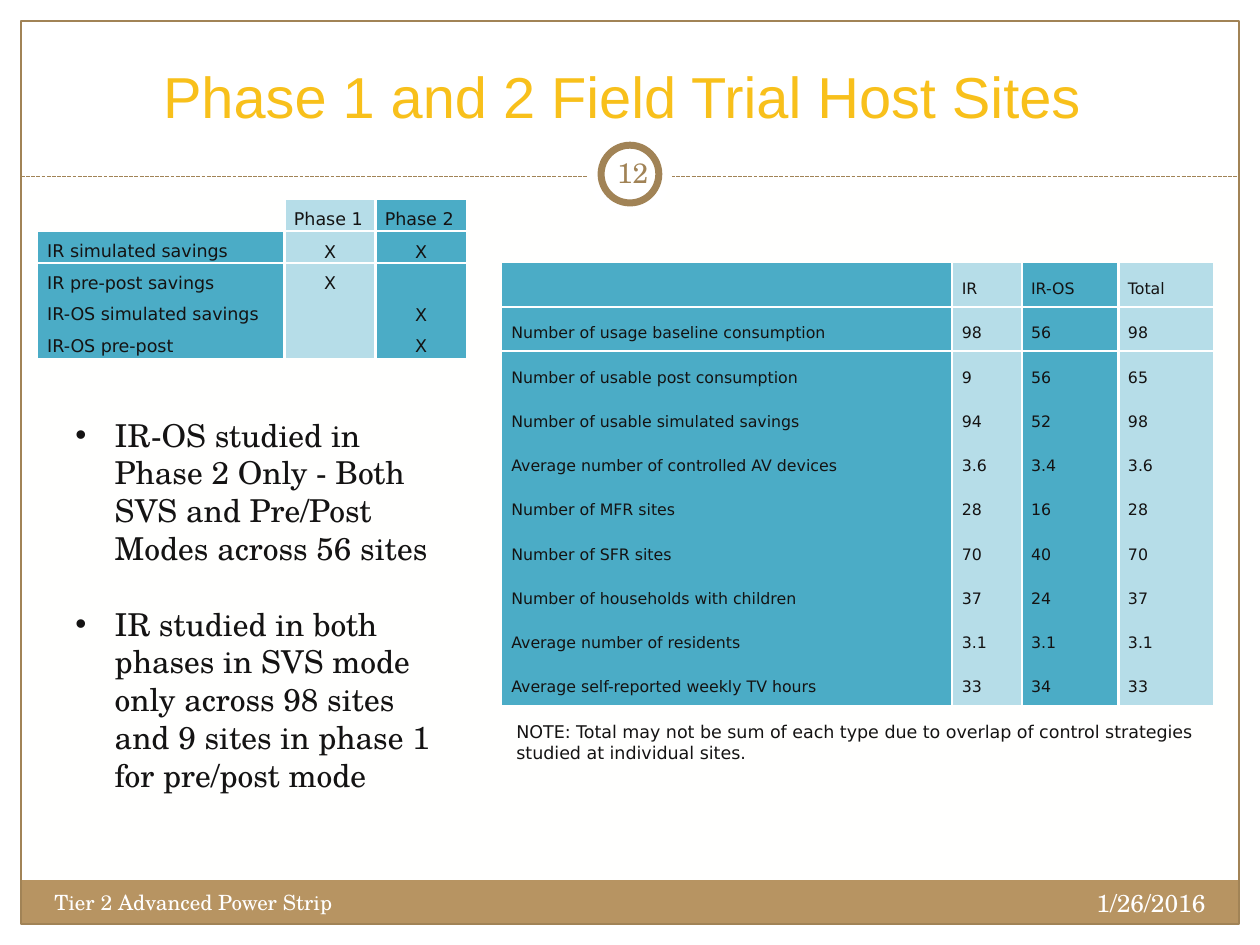
"""Build the field trial host sites slide."""
from lxml.etree import SubElement
from pptx import Presentation
from pptx.dml.color import RGBColor
from pptx.enum.dml import MSO_LINE
from pptx.enum.shapes import MSO_CONNECTOR, MSO_SHAPE
from pptx.enum.text import MSO_ANCHOR, PP_ALIGN
from pptx.oxml import parse_xml
from pptx.oxml.ns import nsdecls, qn
from pptx.util import Pt

SERIF, SANS = "TeX Gyre Schola", "DejaVu Sans"
INK, WHITE, BROWN, TAN, GOLD = "141313", "FFFFFF", "A18356", "B79462", "F8C01B"
TEAL, PALE = "4BACC6", "B6DDE8"
PLAIN_TABLE = "{2D5ABB26-0587-4C30-8999-92F81FD0307C}"

MARGINS = [(0, 528, 720, 12), (0, 0, 720, 109.5), (0, 0, 12, 540), (708, 0, 12, 540)]
PHASES = [
    ("", "Phase 1", "Phase 2"),
    ("IR simulated savings", "X", "X"),
    ("IR pre-post savings", "X", ""),
    ("IR-OS simulated savings", "", "X"),
    ("IR-OS pre-post", "", "X"),
]
SITES = [
    ("", "IR", "IR-OS", "Total"),
    ("Number of usage baseline consumption", "98", "56", "98"),
    ("Number of usable post consumption", "9", "56", "65"),
    ("Number of usable simulated savings", "94", "52", "98"),
    ("Average number of controlled AV devices", "3.6", "3.4", "3.6"),
    ("Number of MFR sites", "28", "16", "28"),
    ("Number of SFR sites", "70", "40", "70"),
    ("Number of households with children", "37", "24", "37"),
    ("Average number of residents", "3.1", "3.1", "3.1"),
    ("Average self-reported weekly TV hours", "33", "34", "33"),
]
FINDINGS = [
    "IR-OS studied in Phase 2 Only - Both SVS and Pre/Post Modes across 56 sites",
    "IR studied in both phases in SVS mode only across 98 sites and 9 sites in phase 1 "
    "for pre/post mode",
]
NOTE = ("NOTE: Total may not be sum of each type due to overlap of control strategies "
        "studied at individual sites.")


def color(value):
    return RGBColor.from_string(value)


def add_panel(page, bounds, fill=None, line=None, width=0.75, kind=MSO_SHAPE.RECTANGLE):
    panel = page.shapes.add_shape(kind, *map(Pt, bounds))
    panel.shadow.inherit = False
    if fill:
        panel.fill.solid()
        panel.fill.fore_color.rgb = color(fill)
    else:
        panel.fill.background()
    if line:
        panel.line.color.rgb = color(line)
        panel.line.width = Pt(width)
    else:
        panel.line.fill.background()


def write(para, text, size=10, font=SANS, ink=INK, align=PP_ALIGN.LEFT, spacing=None):
    para.alignment = align
    if spacing:
        para.line_spacing = spacing
    if not text:
        SubElement(para._p, qn("a:endParaRPr"), sz=str(size * 100))
        return
    span = para.add_run()
    span.text = text
    span.font.size = Pt(size)
    span.font.name = font
    span.font.color.rgb = color(ink)


def add_text(page, bounds, texts, anchor=MSO_ANCHOR.TOP, inset=None, bullet=False,
             gap=0, **style):
    frame = page.shapes.add_textbox(*map(Pt, bounds)).text_frame
    frame.word_wrap = True
    frame.vertical_anchor = anchor
    if inset is not None:
        frame.margin_left = frame.margin_right = Pt(inset)
        frame.margin_top = frame.margin_bottom = Pt(inset)
    for index, text in enumerate(texts):
        para = frame.add_paragraph() if index else frame.paragraphs[0]
        if bullet:
            properties = para._p.get_or_add_pPr()
            properties.set("marL", str(Pt(22.5)))
            properties.set("indent", str(Pt(-22.5)))
            SubElement(properties, qn("a:buFont"), typeface="Arial")
            SubElement(properties, qn("a:buChar"), char="•")
        if index:
            para.space_before = Pt(gap)
        write(para, text, **style)


def add_borders(cell, sides):
    properties = cell._tc.get_or_add_tcPr()
    for position, side in enumerate(sides):
        properties.insert(position, parse_xml(
            f'<a:ln{side} {nsdecls("a")} w="{Pt(1.5)}"><a:solidFill>'
            f'<a:srgbClr val="{WHITE}"/></a:solidFill></a:ln{side}>'))


def add_grid(page, left, top, rows, widths, height, fills, size, look, corner):
    frame = page.shapes.add_table(len(rows), len(widths), Pt(left), Pt(top),
                                  Pt(sum(widths)), Pt(height * len(rows)))
    table = frame.table
    table.first_row = table.horz_banding = False
    table._tbl.tblPr.find(qn("a:tableStyleId")).text = PLAIN_TABLE
    for column, width in zip(table.columns, widths):
        column.width = Pt(width)
    for r, row in enumerate(rows):
        table.rows[r].height = Pt(height)
        for c, text in enumerate(row):
            cell = table.cell(r, c)
            cell.margin_left = cell.margin_right = Pt(5.4)
            cell.margin_top = cell.margin_bottom = 0
            align, cell.vertical_anchor = look(r, c)
            write(cell.text_frame.paragraphs[0], text, size=size, align=align, spacing=1.5)
            if r or c or corner:
                cell.fill.solid()
                cell.fill.fore_color.rgb = color(fills[c])
            else:
                cell.fill.background()
            shown = {"L": c > 0, "R": c < len(widths) - 1, "T": r == 1, "B": r == 0}
            add_borders(cell, [side for side, on in shown.items() if on])


def phase_look(row, column):
    if row and column:
        return PP_ALIGN.CENTER, MSO_ANCHOR.MIDDLE
    return PP_ALIGN.JUSTIFY, MSO_ANCHOR.TOP


def site_look(row, column):
    return PP_ALIGN.LEFT, MSO_ANCHOR.MIDDLE


def add_backdrop(page):
    page.background.fill.solid()
    page.background.fill.fore_color.rgb = color("FFFFFE")
    for bounds in MARGINS:
        add_panel(page, bounds, fill=WHITE)
    add_panel(page, (11.5, 503, 696, 24.5), fill=TAN)
    add_panel(page, (12, 12, 696, 516), line=BROWN)
    rule = page.shapes.add_connector(MSO_CONNECTOR.STRAIGHT, Pt(12), Pt(100.8),
                                     Pt(708), Pt(100.8))
    rule.line.color.rgb = color(BROWN)
    rule.line.width = Pt(0.75)
    rule.line.dash_style = MSO_LINE.SQUARE_DOT
    SubElement(rule._element.spPr, qn("a:effectLst"))
    add_panel(page, (336, 75.5, 48, 48), fill=WHITE, kind=MSO_SHAPE.OVAL)
    add_panel(page, (343.5, 83, 33, 33), fill=WHITE, line=BROWN, width=4,
              kind=MSO_SHAPE.OVAL)


def main():
    deck = Presentation()
    deck.slide_width, deck.slide_height = Pt(720), Pt(540)
    page = deck.slides.add_slide(deck.slide_layouts[6])
    add_backdrop(page)
    add_text(page, (24, 18, 672, 60), ["Phase 1 and 2 Field Trial Host Sites "],
             anchor=MSO_ANCHOR.BOTTOM, size=33, font="Arial", ink=GOLD,
             align=PP_ALIGN.CENTER)
    add_text(page, (456, 504, 240, 28.8), ["1/26/2016"], size=14, font=SERIF,
             ink=WHITE, align=PP_ALIGN.RIGHT)
    add_text(page, (24, 504.5, 282, 28.8), ["Tier 2 Advanced Power Strip"], size=12,
             font=SERIF, ink=WHITE)
    add_text(page, (343.5, 81, 36, 34.5), ["12"], anchor=MSO_ANCHOR.MIDDLE, inset=3.6,
             size=16, font=SERIF, ink=BROWN, align=PP_ALIGN.CENTER)
    add_grid(page, 286.8, 150, SITES, (257.4, 39.6, 55.4, 54), 25.3,
             (TEAL, PALE, TEAL, PALE), 9, site_look, True)
    add_text(page, (288, 408, 405.5, 31.5), [NOTE], anchor=MSO_ANCHOR.MIDDLE)
    add_grid(page, 21.6, 114, PHASES, (141, 52, 52), 18, (TEAL, PALE, TEAL), 10,
             phase_look, False)
    add_text(page, (36, 234, 222, 247), FINDINGS, bullet=True, gap=21.6, size=18,
             font=SERIF)
    deck.save("out.pptx")


if __name__ == "__main__":
    main()
